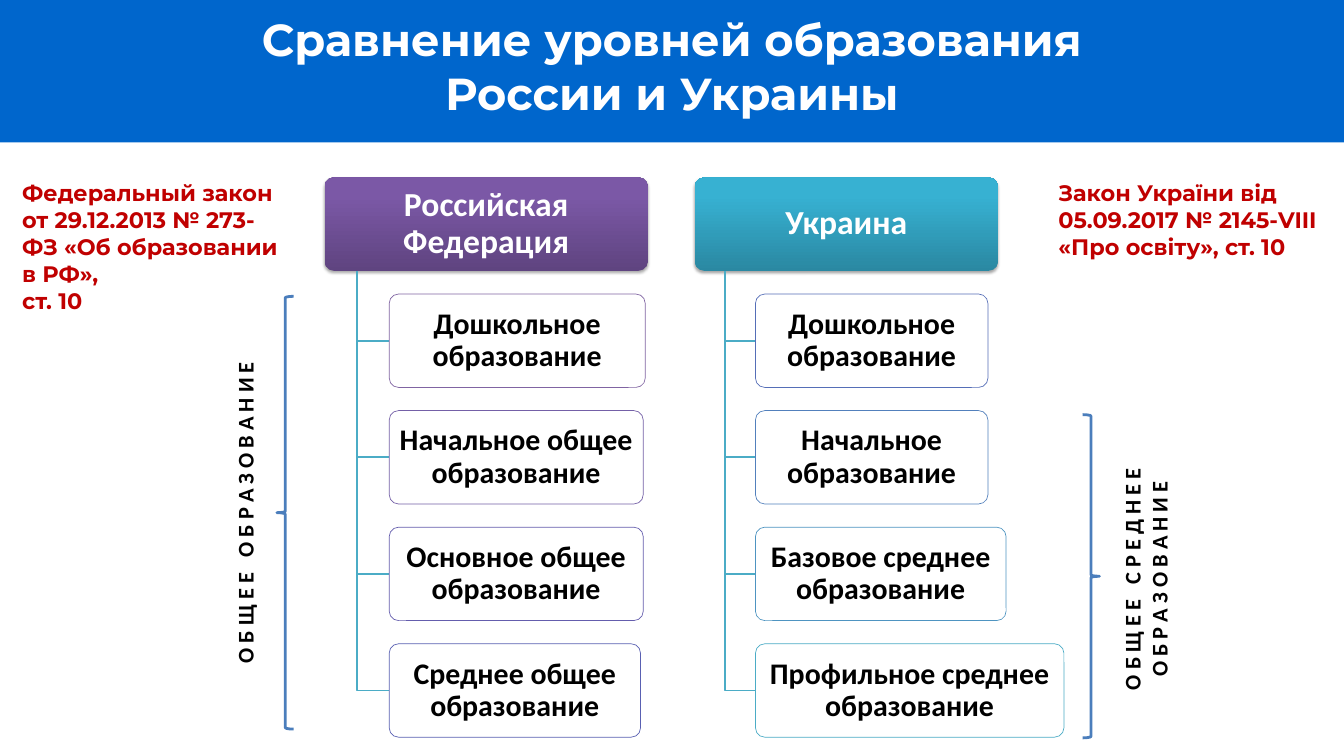
from lxml.etree import SubElement
from pptx import Presentation
from pptx.dml.color import RGBColor
from pptx.enum.shapes import MSO_SHAPE
from pptx.enum.text import MSO_ANCHOR, PP_ALIGN
from pptx.oxml.ns import qn
from pptx.util import Inches, Pt

THEME = {
    "band": "0066CC", "white": "FFFFFF", "black": "000000",
    "law": "C00000", "elbow": "4BACC6", "brace": "4B7EBC",
    "title": 48, "head": 36, "box": 32, "note": 24,
    "sans": "Calibri", "show": "Montserrat",
}

TITLE = ["Сравнение уровней образования", "России и Украины"]

TREES = [
    {"left": 4.83, "width": 4.81, "head": ["Российская", "Федерация"],
     "fade": ("5F4480", "7B58A6"),
     "rows": [("Дошкольное образование", 3.81, "8064A2"),
              ("Начальное общее образование", 3.78, "7460A7"),
              ("Основное общее образование", 3.78, "645DAD"),
              ("Среднее общее образование", 3.74, "5960B2")]},
    {"left": 10.34, "width": 4.51, "head": ["Украина"],
     "fade": ("2A88A2", "37B1D2"),
     "rows": [("Дошкольное образование", 3.46, "556EB7"),
              ("Начальное образование", 3.46, "5280BC"),
              ("Базовое среднее образование", 3.73, "4E94C1"),
              ("Профильное среднее образование", 4.59, "4BACC6")]},
]

LAWS = [
    (0.33, 1.62, ["Федеральный закон от 29.12.2013 № 273-ФЗ «Об образовании в РФ»,",
                  "ст. 10"]),
    (15.75, 1.21, ["Закон України від 05.09.2017 № 2145-VIII «Про освіту», ст. 10"]),
]

SPANS = [
    {"brace": (4.12, 4.41, 0.25, 6.44), "turn": 0,
     "label": (3.39, 4.92, 0.5, 5.42), "text": ["ОБЩЕЕ ОБРАЗОВАНИЕ"]},
    {"brace": (16.11, 6.17, 0.25, 4.81), "turn": 180,
     "label": (16.58, 5.91, 0.92, 5.42), "text": ["ОБЩЕЕ СРЕДНЕЕ", "ОБРАЗОВАНИЕ"]},
]

TOP, HIGH, STEP = 2.64, 1.39, 1.735


def rgb(key):
    return RGBColor.from_string(THEME.get(key, key))


def write(shape, lines, size, color, font="sans", align=PP_ALIGN.CENTER,
          anchor=MSO_ANCHOR.MIDDLE, pad=(0, 0, 0, 0), space=None):
    frame = shape.text_frame
    frame.word_wrap = True
    frame.vertical_anchor = anchor
    (frame.margin_left, frame.margin_top,
     frame.margin_right, frame.margin_bottom) = map(Inches, pad)
    for i, line in enumerate(lines):
        para = frame.add_paragraph() if i else frame.paragraphs[0]
        para.alignment = align
        if space:
            para.line_spacing = space
        run = para.add_run()
        run.text = line
        run.font.size = Pt(THEME[size])
        run.font.name = THEME[font]
        run.font.bold = True
        run.font.color.rgb = rgb(color)


def add_shape(kind, area, fill=None, line=None, weight=0.75):
    shape = slide.shapes.add_shape(kind, *map(Inches, area))
    paint(shape, fill, line, weight)
    return shape


def paint(shape, fill, line, weight):
    shape.shadow.inherit = False
    if fill:
        shape.fill.solid()
        shape.fill.fore_color.rgb = rgb(fill)
    else:
        shape.fill.background()
    if line:
        shape.line.color.rgb = rgb(line)
        shape.line.width = Pt(weight)
    else:
        shape.line.fill.background()


def add_text(area):
    return slide.shapes.add_textbox(*map(Inches, area))


def add_card(area, lines, size, color, line=None):
    card = add_shape(MSO_SHAPE.ROUNDED_RECTANGLE, area, "white", line)
    card.adjustments[0] = 0.1
    write(card, lines, size, color, pad=(0.11, 0.08, 0.11, 0.08), space=0.9)
    return card


def add_fade(card, colors):
    card.fill.gradient()
    card.fill.gradient_angle = 90
    for stop, color, spot in zip(card.fill.gradient_stops, colors, (0, 0.8)):
        stop.color.rgb = rgb(color)
        stop.position = spot


def add_shade(card):
    effects = card._element.spPr.find(qn("a:effectLst"))
    shade = SubElement(effects, qn("a:outerShdw"), blurRad="40000",
                       dist="23000", dir="5400000", rotWithShape="0")
    color = SubElement(shade, qn("a:srgbClr"), val=THEME["black"])
    SubElement(color, qn("a:alpha"), val="35000")


def add_elbow(left, top, right, end):
    pen = slide.shapes.build_freeform(Inches(left), Inches(top))
    pen.add_line_segments([(Inches(left), Inches(end)),
                           (Inches(right), Inches(end))], close=False)
    paint(pen.convert_to_shape(), None, "elbow", 2)


def add_tree(tree):
    left, width = tree["left"], tree["width"]
    stem, start = left + width * 0.1, left + width * 0.2
    head = add_card((left, TOP, width, HIGH), tree["head"], "head", "white")
    add_fade(head, tree["fade"])
    add_shade(head)
    for i, (text, wide, edge) in enumerate(tree["rows"], 1):
        top = TOP + i * STEP
        add_elbow(stem, TOP + HIGH, start, top + HIGH / 2)
        add_card((start, top, wide, HIGH), [text], "box", "black", edge)


def add_span(span):
    brace = add_shape(MSO_SHAPE.LEFT_BRACE, span["brace"], None, "brace", 3)
    brace.rotation = span["turn"]
    label = add_text(span["label"])
    write(label, [" ".join(text) for text in span["text"]], "note", "black",
          pad=(0.1, 0.05, 0.1, 0.05))
    label.text_frame._txBody.bodyPr.set("vert", "vert270")


deck = Presentation()
deck.slide_width, deck.slide_height = Inches(20), Inches(11.25)
slide = deck.slides.add_slide(deck.slide_layouts[6])

band = add_shape(MSO_SHAPE.RECTANGLE, (0, 0, 20, 2.12), "band")
write(band, TITLE, "title", "white", "show",
      anchor=MSO_ANCHOR.TOP, pad=(0, 0.18, 0, 0))
for tree in TREES:
    add_tree(tree)
for left, high, lines in LAWS:
    write(add_text((left, 2.67, 3.92, high)), lines, "note", "law", "show",
          PP_ALIGN.LEFT, MSO_ANCHOR.TOP)
for span in SPANS:
    add_span(span)

deck.save("out.pptx")
